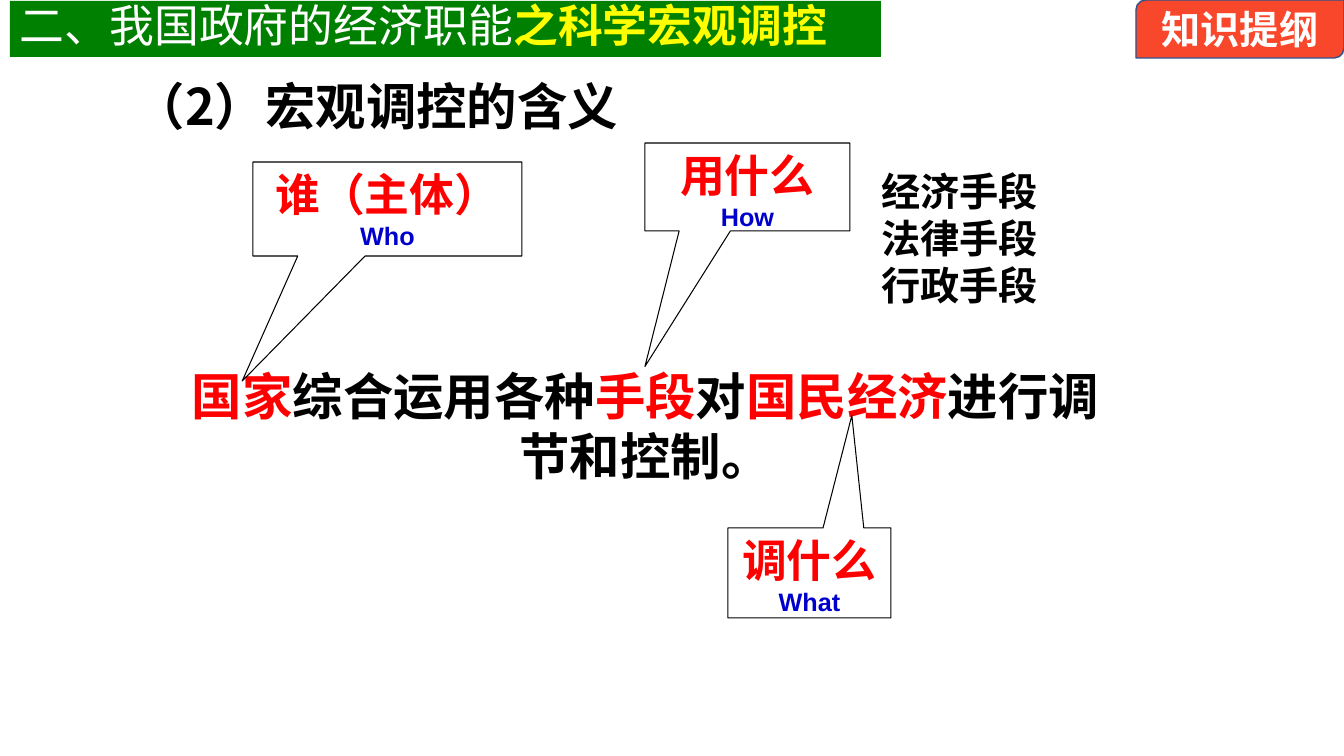
from pptx import Presentation
from pptx.dml.color import RGBColor
from pptx.enum.shapes import MSO_SHAPE
from pptx.enum.text import MSO_ANCHOR, PP_ALIGN
from pptx.oxml.ns import qn
from pptx.util import Pt
from lxml import etree

RECT = MSO_SHAPE.RECTANGLE
CALLOUT = MSO_SHAPE.RECTANGULAR_CALLOUT
TAB = MSO_SHAPE.ROUND_2_DIAG_RECTANGLE
TOP, MIDDLE = MSO_ANCHOR.TOP, MSO_ANCHOR.MIDDLE
LEFT, CENTER = PP_ALIGN.LEFT, PP_ALIGN.CENTER

BLACK = RGBColor(0x00, 0x00, 0x00)
WHITE = RGBColor(0xFF, 0xFF, 0xFF)
RED = RGBColor(0xFF, 0x00, 0x00)
BLUE = RGBColor(0x00, 0x00, 0xCC)
GREEN = RGBColor(0x00, 0x80, 0x00)
YELLOW = RGBColor(0xFF, 0xFF, 0x00)
ORANGE = RGBColor(0xF8, 0x47, 0x2A)
NAVY = RGBColor(0x2F, 0x52, 0x8F)

CJK = "Noto Sans CJK SC"
LATIN = "Arial"
WIDTH, HEIGHT = 1344, 756
SCALE = 12192000 / WIDTH

HEADING = "（2）宏观调控的含义"
MEANS = ["经济手段", "法律手段", "行政手段"]
SENTENCE = [
    ("国家", RED), ("综合运用各种", BLACK), ("手段", RED),
    ("对", BLACK), ("国民经济", RED), ("进行调节和控制。", BLACK),
]
CALLOUTS = [
    ("谁（主体）", "Who", (253, 162, 269, 94), (-0.54, 1.83)),
    ("用什么", "How", (645, 143, 205, 88), (-0.5, 2.04)),
    ("调什么", "What", (728, 528, 163, 90), (0.26, -1.75)),
]
HEADER = [("二、我国政府的经济职能", WHITE, False), ("之科学宏观调控", YELLOW, True)]
OUTLINE = "知识提纲"


def px(n):
    return round(n * SCALE)


def add_box(box, kind=None, fill=None, line=None, weight=0.75, anchor=TOP):
    place = [px(n) for n in box]
    if kind is None:
        s = shapes.add_textbox(*place)
    else:
        s = shapes.add_shape(kind, *place)
        s.shadow.inherit = False
        if fill is None:
            s.fill.background()
        else:
            s.fill.solid()
            s.fill.fore_color.rgb = fill
        if line is None:
            s.line.fill.background()
        else:
            s.line.color.rgb = line
            s.line.width = Pt(weight)
    s.text_frame.word_wrap = True
    s.text_frame.vertical_anchor = anchor
    return s


def add_run(p, text, size, color, bold=True, name=CJK):
    r = p.add_run()
    r.text = text
    style = {"size": Pt(size), "bold": bold, "name": name}
    for key, value in style.items():
        setattr(r.font, key, value)
    r.font.color.rgb = color
    latin = r.font._element.find(qn("a:latin"))
    ea = etree.Element(qn("a:ea"), typeface=CJK)
    latin.addnext(ea)


def write(s, lines, align=CENTER):
    tf = s.text_frame
    for i, runs in enumerate(lines):
        p = tf.paragraphs[0] if i == 0 else tf.add_paragraph()
        p.alignment = align
        for run in runs:
            add_run(p, *run)
    return tf.paragraphs[0]


prs = Presentation()
prs.slide_width, prs.slide_height = px(WIDTH), px(HEIGHT)
shapes = prs.slides.add_slide(prs.slide_layouts[6]).shapes

write(add_box((24, 70, 705, 71)), [[(HEADING, 36, BLACK)]])

sentence = add_box((168, 360, 955, 131), RECT, WHITE)
write(sentence, [[(text, 36, color, True, LATIN) for text, color in SENTENCE]])

write(add_box((853, 162, 213, 151)), [[(text, 28, BLACK)] for text in MEANS])

for question, english, box, tip in CALLOUTS:
    s = add_box(box, CALLOUT, line=BLACK)
    s.adjustments[0], s.adjustments[1] = tip
    p = write(s, [[(question, 32, RED, True, LATIN)]])
    p.add_line_break()
    add_run(p, english, 18, BLUE, name=LATIN)

header = add_box((10, 1, 871, 56), RECT, GREEN)
p = write(header, [[(text, 32, color, bold) for text, color, bold in HEADER]], LEFT)
p.line_spacing = 0.85

tab = add_box((1136, 0, 208, 58), TAB, ORANGE, NAVY, 1, MIDDLE)
write(tab, [[(OUTLINE, 28, WHITE)]])

prs.save("out.pptx")
